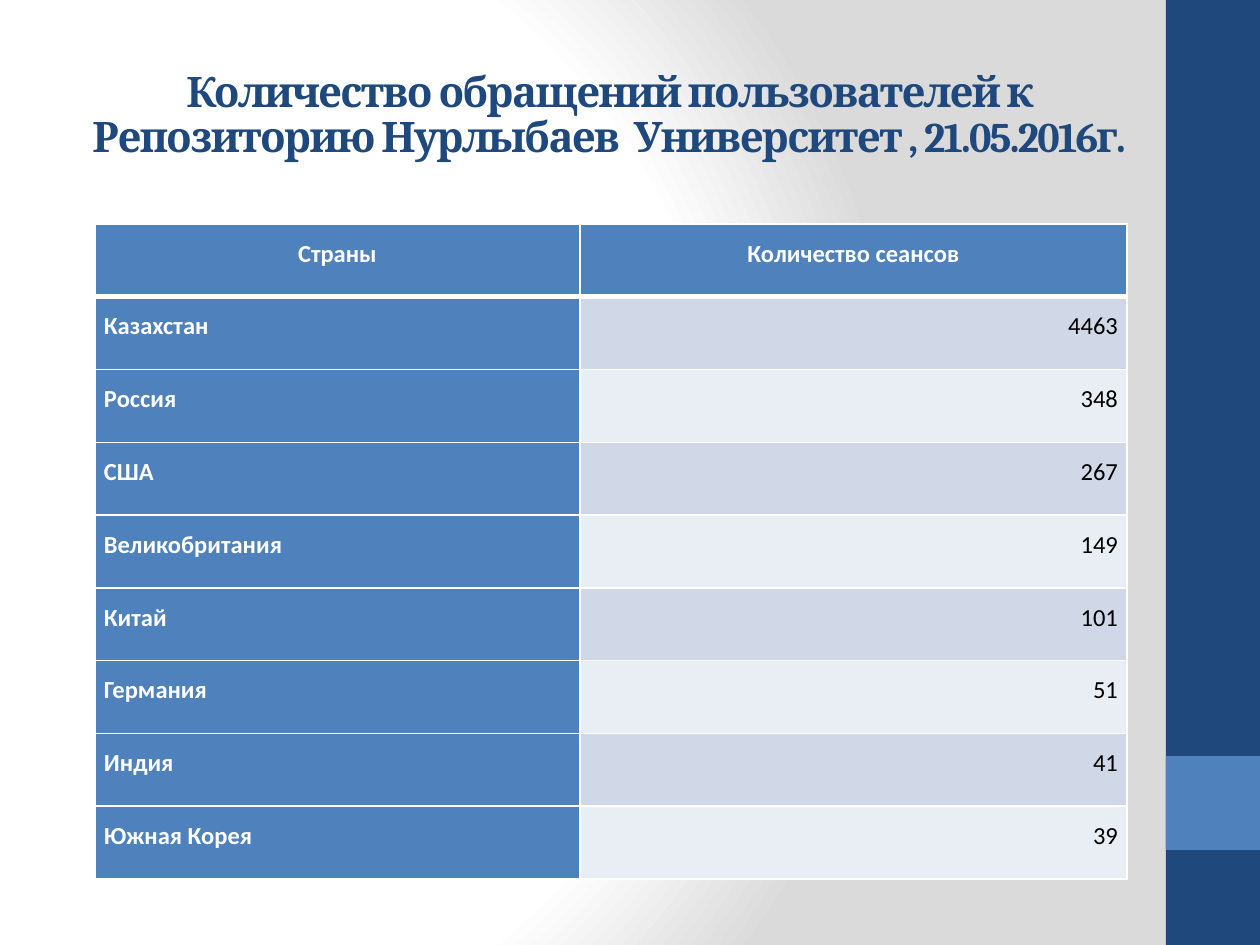
from dataclasses import dataclass

from pptx import Presentation
from pptx import util as u
from pptx.dml.color import RGBColor
from pptx.enum import shapes, text
from pptx.oxml import parse_xml
from pptx.oxml.ns import nsdecls

PX = u.Inches(1) / 126


@dataclass(frozen=True)
class Theme:
    navy: str = "1F497D"
    blue: str = "4F81BD"
    white: str = "FFFFFF"
    black: str = "000000"
    gray: str = "DADADA"
    bands: tuple = ("D0D8E8", "E9EDF4")
    title_font: str = "Cambria"
    body_font: str = "Calibri"
    title_size: int = 24
    body_size: int = 14


THEME = Theme()
TITLE = "Количество обращений пользователей к Репозиторию Нурлыбаев  Университет , 21.05.2016г."
HEADERS = ("Страны", "Количество сеансов")
SESSIONS = (
    ("Казахстан", 4463),
    ("Россия", 348),
    ("США", 267),
    ("Великобритания", 149),
    ("Китай", 101),
    ("Германия", 51),
    ("Индия", 41),
    ("Южная Корея", 39),
)
COLUMN_WIDTHS = (485, 547)
TABLE_HEIGHT = 655


def px(value):
    return u.Emu(round(value * PX))


def set_attributes(target, values):
    for name, value in values.items():
        setattr(target, name, value)


def place(shape, left, top, width, height):
    set_attributes(shape, {"left": px(left), "top": px(top),
                           "width": px(width), "height": px(height)})


def write(frame, content, align, spacing, color, **font):
    """Fill a text frame with one formatted paragraph and return its run."""
    paragraph = frame.paragraphs[0]
    set_attributes(paragraph, {"alignment": align, "line_spacing": spacing,
                               "space_before": u.Pt(0)})
    run = paragraph.add_run()
    run.text = content
    set_attributes(run.font, font)
    run.font.color.rgb = RGBColor.from_string(color)
    return run


def add_background(slide):
    """Lay a circular gradient, which python-pptx cannot set itself."""
    stops = "".join(
        f'<a:gs pos="{percent * 1000}"><a:srgbClr val="{color}"/></a:gs>'
        for percent, color in ((0, THEME.white), (75, THEME.white), (100, THEME.gray)))
    slide.element.cSld.insert(0, parse_xml(
        f'<p:bg {nsdecls("p", "a")}><p:bgPr><a:gradFill rotWithShape="1">'
        f'<a:gsLst>{stops}</a:gsLst><a:path path="circle">'
        '<a:fillToRect l="20000" t="50000" r="100000" b="50000"/></a:path>'
        '</a:gradFill><a:effectLst/></p:bgPr></p:bg>'))


def add_bar(slide, top, height, color):
    bar = slide.shapes.add_shape(shapes.MSO_SHAPE.RECTANGLE, 0, 0, 0, 0)
    place(bar, 1166, top, 94, height)
    bar.shadow.inherit = False
    bar.fill.solid()
    bar.fill.fore_color.rgb = RGBColor.from_string(color)
    bar.line.fill.background()


def add_title(slide):
    title = slide.shapes.title
    place(title, 63, 38, 1092, 157)
    frame = title.text_frame
    set_attributes(frame, {"word_wrap": True, "auto_size": text.MSO_AUTO_SIZE.NONE,
                           "vertical_anchor": text.MSO_ANCHOR.MIDDLE})
    run = write(frame, TITLE, text.PP_ALIGN.CENTER, 0.9, THEME.navy,
                name=THEME.title_font, size=u.Pt(THEME.title_size), bold=True)
    run.font._element.set("spc", "-100")


def add_borders(cell, widths):
    """Draw white cell edges; widths maps each edge to points."""
    properties = cell._tc.get_or_add_tcPr()
    for position, (edge, width) in enumerate(widths.items()):
        properties.insert(position, parse_xml(
            f'<a:ln{edge} {nsdecls("a")} w="{u.Pt(width)}"><a:solidFill>'
            f'<a:srgbClr val="{THEME.white}"/></a:solidFill></a:ln{edge}>'))


def format_cell(cell, content, align, fill, color, bold, top=1, bottom=1):
    set_attributes(cell, {"margin_left": px(9), "margin_right": px(9),
                          "margin_top": 0, "margin_bottom": 0})
    cell.fill.solid()
    cell.fill.fore_color.rgb = RGBColor.from_string(fill)
    add_borders(cell, {"L": 1, "R": 1, "T": top, "B": bottom})
    write(cell.text_frame, content, align, 1.5, color, bold=bold,
          name=THEME.body_font, size=u.Pt(THEME.body_size))


def add_sessions_table(slide):
    row_count = len(SESSIONS) + 1
    table = slide.shapes.add_table(
        row_count, len(HEADERS), px(95), px(224),
        px(sum(COLUMN_WIDTHS)), px(TABLE_HEIGHT)).table
    for column, width in zip(table.columns, COLUMN_WIDTHS):
        column.width = px(width)
    for row in table.rows:
        row.height = px(TABLE_HEIGHT / row_count)
    for index, header in enumerate(HEADERS):
        format_cell(table.cell(0, index), header, text.PP_ALIGN.CENTER,
                    THEME.blue, THEME.white, True, bottom=3)
    for index, (country, count) in enumerate(SESSIONS):
        top = 3 if index == 0 else 1
        format_cell(table.cell(index + 1, 0), country, text.PP_ALIGN.JUSTIFY,
                    THEME.blue, THEME.white, True, top=top)
        format_cell(table.cell(index + 1, 1), str(count), text.PP_ALIGN.RIGHT,
                    THEME.bands[index % 2], THEME.black, False, top=top)


def main():
    presentation = Presentation()
    set_attributes(presentation, {"slide_width": px(1260), "slide_height": px(945)})
    slide = presentation.slides.add_slide(presentation.slide_layouts[5])
    add_background(slide)
    add_bar(slide, 0, 945, THEME.navy)
    add_bar(slide, 756, 94, THEME.blue)
    add_title(slide)
    add_sessions_table(slide)
    presentation.save("out.pptx")


if __name__ == "__main__":
    main()
